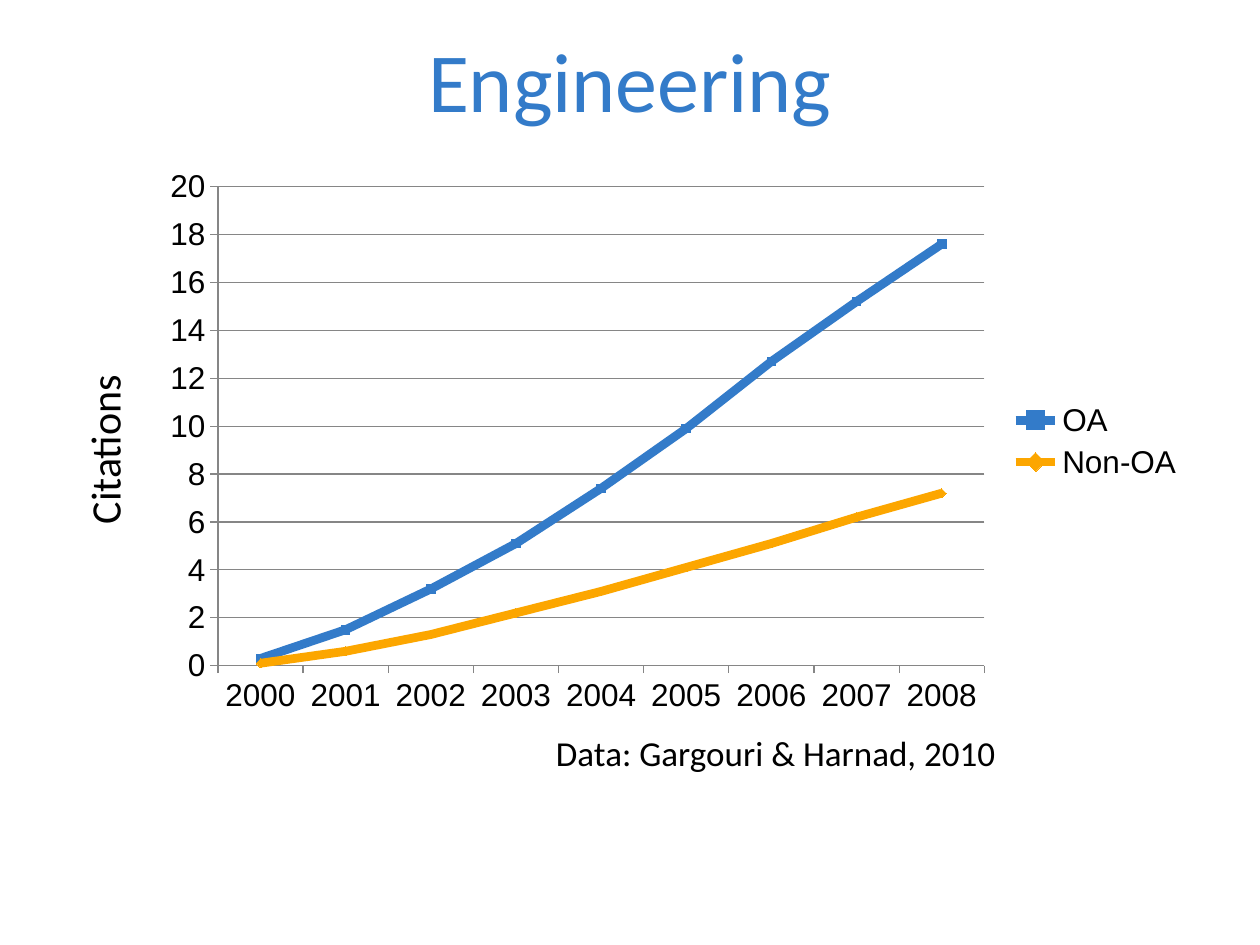
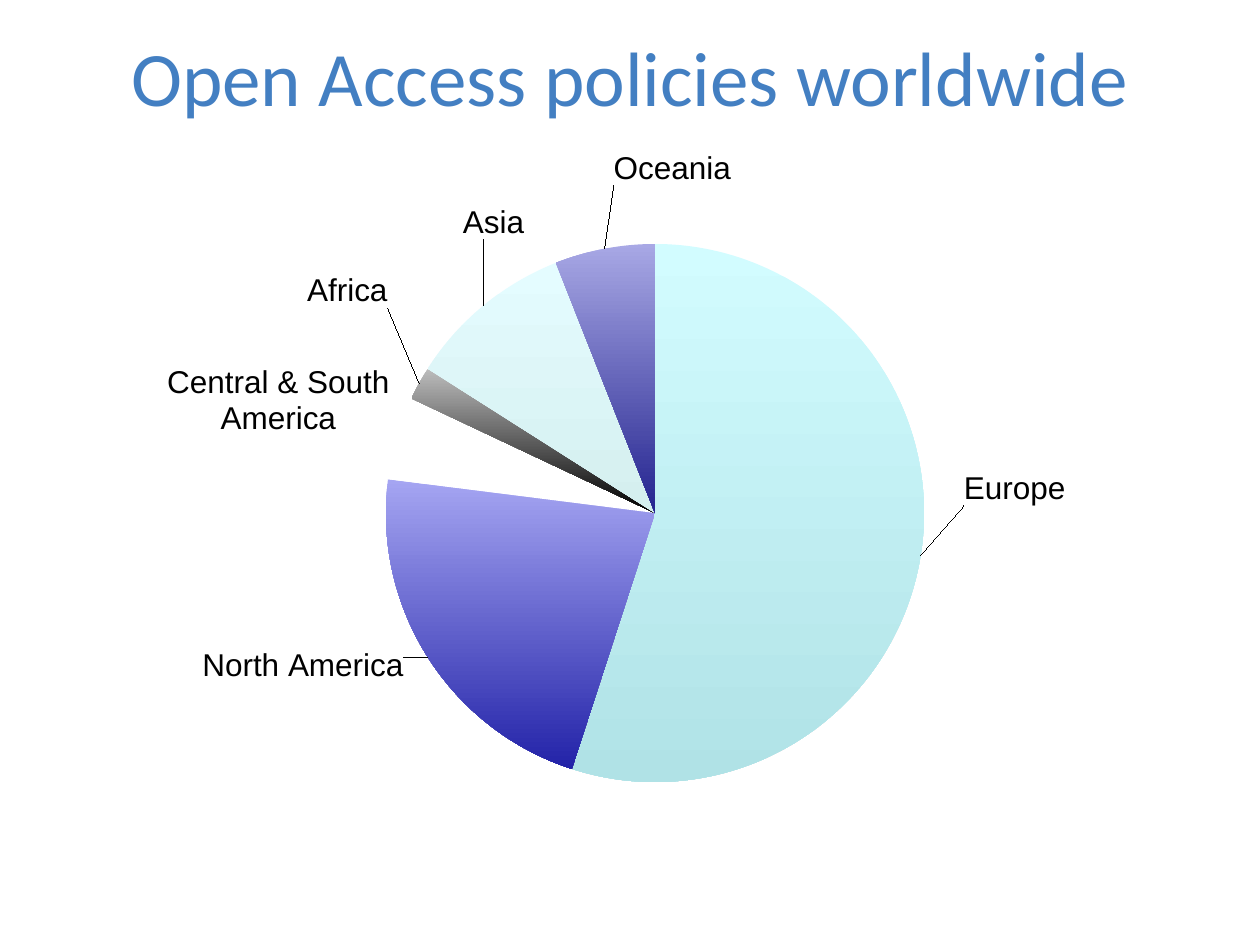
from lxml.etree import SubElement
from pptx import Presentation
from pptx.chart.data import CategoryChartData
from pptx.dml.color import RGBColor
from pptx.enum.chart import (XL_CHART_TYPE, XL_LABEL_POSITION, XL_LEGEND_POSITION,
                             XL_MARKER_STYLE, XL_TICK_MARK)
from pptx.enum.text import MSO_ANCHOR, PP_ALIGN
from pptx.oxml.ns import qn
from pptx.util import Cm, Pt

BLACK = "000000"
GRID_GREY = "868686"
OA_BLUE = "337BC9"
NON_OA_ORANGE = "FCA600"
POLICY_BLUE = "437FC2"
rgb = RGBColor.from_string


def add_text(slide, text, box, size, align=PP_ALIGN.CENTER, color=BLACK):
    """Add one Calibri paragraph in a box given as left, top, width, height in cm."""
    frame = slide.shapes.add_textbox(*map(Cm, box)).text_frame
    frame.word_wrap = True
    frame.vertical_anchor = MSO_ANCHOR.MIDDLE
    paragraph = frame.paragraphs[0]
    paragraph.text = text
    paragraph.alignment = align
    for name, value in {"name": "Calibri", "size": Pt(size)}.items():
        setattr(paragraph.font, name, value)
    paragraph.font.color.rgb = rgb(color)
    return frame


def set_layout(parent, index, **values):
    """Give a plot area or a data label a manual layout, as shares of the chart."""
    for old in parent.findall(qn("c:layout")):
        parent.remove(old)
    layout = SubElement(parent, qn("c:layout"))
    parent.insert(index, layout)
    manual = SubElement(layout, qn("c:manualLayout"))
    for name, value in values.items():
        SubElement(manual, qn(f"c:{name}")).set("val", str(value))


INNER = {"layoutTarget": "inner", "xMode": "edge", "yMode": "edge"}
CHART_FONT = {"name": "Arial", "size": Pt(18)}

prs = Presentation()
prs.slide_width, prs.slide_height = Cm(25.4), Cm(19.05)
blank = prs.slide_layouts[6]

# Slide 1: citations per year
engineering = prs.slides.add_slide(blank)
add_text(engineering, "Engineering", (1.27, 0, 22.86, 3.18), 48, color=OA_BLUE)

citations = CategoryChartData()
citations.categories = [str(year) for year in range(2000, 2009)]
citations.add_series("OA", (0.3, 1.5, 3.2, 5.1, 7.4, 9.9, 12.7, 15.2, 17.6))
citations.add_series("Non-OA", (0.1, 0.6, 1.3, 2.2, 3.1, 4.1, 5.1, 6.2, 7.2))
citation_chart = engineering.shapes.add_chart(
    XL_CHART_TYPE.LINE_MARKERS, Cm(3.02), Cm(3.18), Cm(21.11), Cm(11.43), citations).chart

citation_chart.has_title = False
citation_chart.has_legend = True
citation_chart.legend.position = XL_LEGEND_POSITION.RIGHT
citation_chart.legend.include_in_layout = False
set_layout(citation_chart.plots[0]._element.getparent(), 0, **INNER,
           x=0.065, y=0.051, w=0.732, h=0.845)

value_axis = citation_chart.value_axis
for name, value in {"minimum_scale": 0, "maximum_scale": 20, "major_unit": 2,
                    "has_major_gridlines": True}.items():
    setattr(value_axis, name, value)
value_axis.tick_labels.number_format = "0"
value_axis.tick_labels.number_format_is_linked = False
for axis in (citation_chart.category_axis, value_axis):
    axis.major_tick_mark = XL_TICK_MARK.OUTSIDE
for line in (citation_chart.category_axis.format.line, value_axis.format.line,
             value_axis.major_gridlines.format.line):
    line.color.rgb = rgb(GRID_GREY)
    line.width = Pt(0.75)

series_looks = ((OA_BLUE, XL_MARKER_STYLE.SQUARE), (NON_OA_ORANGE, XL_MARKER_STYLE.DIAMOND))
for series, (color, marker_style) in zip(citation_chart.plots[0].series, series_looks):
    series.smooth = False
    series.format.line.color.rgb = rgb(color)
    series.format.line.width = Pt(5)
    series.marker.style = marker_style
    series.marker.size = 5
    series.marker.format.fill.solid()
    series.marker.format.fill.fore_color.rgb = rgb(color)
    series.marker.format.line.color.rgb = rgb(color)

add_text(engineering, "Data: Gargouri & Harnad, 2010", (8.89, 14.61, 11.43, 1.12), 20,
         PP_ALIGN.RIGHT)
axis_caption = add_text(engineering, "Citations", (1.32, 5.28, 1.55, 7.57), 24)
axis_caption._txBody.bodyPr.set("vert", "vert270")

# Slide 2: share of policies by region
policies = prs.slides.add_slide(blank)
add_text(policies, "Open Access policies worldwide", (1.91, 0.53, 21.59, 2.01), 44,
         color=POLICY_BLUE)

# region, share, top colour, bottom colour, label shift as shares of the chart
regions = (
    ("Europe", 55, "D2FCFF", "B0E2E6", (0.03, -0.117)),
    ("North America", 22, "A5A5F2", "2323A8", (-0.015, -0.018)),
    ("Central & South America", 5, "FFFFFF", "FFFFFF", None),
    ("Africa", 2, "BCBCBC", "000000", (-0.021, -0.098)),
    ("Asia", 10, "E4FCFF", "D5EFEF", (0.038, -0.082)),
    ("Oceania", 6, "A8A8E5", "24248F", (0.107, -0.076)),
)
shares = CategoryChartData()
shares.categories = [region[0] for region in regions]
shares.add_series("Series 1", [region[1] for region in regions])
policy_chart = policies.shapes.add_chart(
    XL_CHART_TYPE.PIE, Cm(0.89), Cm(2.51), Cm(24.1), Cm(14.78), shares).chart
policy_chart.has_title = False
policy_chart.has_legend = False
pie = policy_chart.plots[0]
set_layout(pie._element.getparent(), 0, **INNER, x=0.133, y=0.163, w=0.756, h=0.734)

share_series = pie.series[0]
label_format = {"show_category_name": True, "show_value": False, "show_percentage": False,
                "position": XL_LABEL_POSITION.OUTSIDE_END}
for name, value in label_format.items():
    setattr(share_series.data_labels, name, value)

for index, (region, share, top_color, bottom_color, shift) in enumerate(regions):
    point = share_series.points[index]
    fill = point.format.fill
    fill.gradient()
    fill.gradient_angle = 270
    for stop, color in zip(fill.gradient_stops, (top_color, bottom_color)):
        stop.color.rgb = rgb(color)
    point.format.line.fill.background()
    if shift:
        point.data_label.position = XL_LABEL_POSITION.OUTSIDE_END
        label = share_series._element.xpath("c:dLbls/c:dLbl")[-1]
        label.find(qn("c:showVal")).set("val", "0")
        label.find(qn("c:showCatName")).set("val", "1")
        set_layout(label, 1, x=shift[0], y=shift[1])

for chart in (citation_chart, policy_chart):
    for name, value in CHART_FONT.items():
        setattr(chart.font, name, value)
    chart.font.color.rgb = rgb(BLACK)

prs.save("out.pptx")
